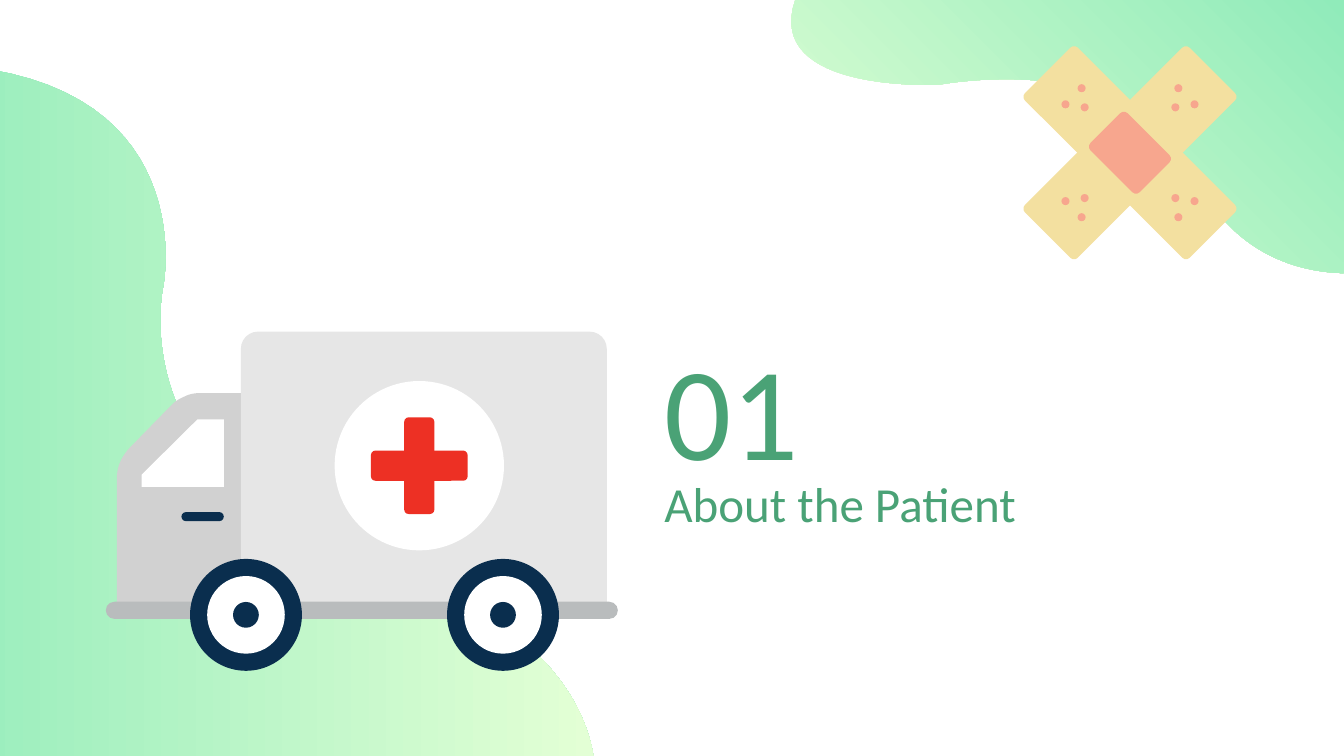
import itertools
import pptx
import pptx.dml.color
import pptx.enum.shapes
import pptx.enum.text
import pptx.util
from dataclasses import dataclass

KIND = pptx.enum.shapes.MSO_SHAPE
COLUMNS, ROWS = 133.33, 75
WIDTH, HEIGHT = pptx.util.Inches(13.33), pptx.util.Inches(7.5)


@dataclass(frozen=True)
class Theme:
    """Colours, font and type sizes of the slide."""
    font: str = "Calibri"
    number_size: float = 94.7
    title_size: float = 35
    text: str = "4AA276"
    mint: str = "90EBBA"
    pale: str = "E3FFD5"
    plaster: str = "F3E0A0"
    pad: str = "F7A68E"
    cab: str = "D1D1D1"
    body: str = "E6E6E6"
    bumper: str = "B9BCBD"
    navy: str = "0A2E4E"
    red: str = "ED3024"
    white: str = "FFFFFF"


def rgb(colour):
    """Turn a hex string into a colour."""
    return pptx.dml.color.RGBColor.from_string(colour)


def write(shape, text, *, font, size, colour):
    """Put one formatted line of text into a shape."""
    paragraph = shape.text_frame.paragraphs[0]
    run = paragraph.add_run()
    run.text = text
    run.font.name = font
    run.font.size = pptx.util.Pt(size)
    run.font.color.rgb = rgb(colour)


def trace(start, segments, steps=32):
    """Yield the points of lines (one point) and cubic curves (three points)."""
    for segment in segments:
        if len(segment) == 1:
            yield segment[0]
        else:
            for step in range(1, steps + 1):
                t = step / steps
                weights = (1 - t) ** 3, 3 * t * (1 - t) ** 2, 3 * t * t * (1 - t), t ** 3
                yield tuple(sum(weight * value for weight, value in zip(weights, axis))
                            for axis in zip(start, *segment))
        start = segment[-1]


class Painter:
    """Draws on one slide, with all lengths in grid columns and rows."""

    def __init__(self, slide, theme):
        """Keep the slide and the style."""
        self.slide = slide
        self.theme = theme
        self.shapes = slide.shapes

    def across(self, columns):
        """Convert columns to a length."""
        return round(columns * WIDTH / COLUMNS)

    def down(self, rows):
        """Convert rows to a length."""
        return round(rows * HEIGHT / ROWS)

    def group(self):
        """Collect the next shapes in a new group."""
        self.shapes = self.slide.shapes.add_group_shape().shapes

    def finish(self, shape, colour):
        """Give a shape a flat fill without line or shadow."""
        shape.shadow.inherit = False
        shape.line.fill.background()
        shape.fill.solid()
        shape.fill.fore_color.rgb = rgb(colour)
        return shape

    def preset(self, kind, left, top, width, height, colour):
        """Add a preset shape."""
        shape = self.shapes.add_shape(kind, self.across(left), self.down(top),
                                      self.across(width), self.down(height))
        return self.finish(shape, colour)

    def rounded(self, left, top, width, height, colour, radius,
                kind=KIND.ROUNDED_RECTANGLE, rotation=0):
        """Add a rectangle with rounded corners."""
        shape = self.preset(kind, left, top, width, height, colour)
        shape.adjustments[0] = radius / min(width, height)
        shape.rotation = rotation

    def tilted(self, centre, width, height, colour, rotation):
        """Add a rounded rectangle turned about its centre."""
        self.rounded(centre[0] - width / 2, centre[1] - height / 2,
                     width, height, colour, 0.5, rotation=rotation)

    def disc(self, x, y, radius, colour):
        """Add a circle about its centre."""
        self.preset(KIND.OVAL, x - radius, y - radius, 2 * radius, 2 * radius, colour)

    def outline(self, colour, start, *segments):
        """Add a closed outline of lines and curves."""
        builder = self.shapes.build_freeform(self.across(start[0]), self.down(start[1]))
        builder.add_line_segments([(self.across(x), self.down(y))
                                   for x, y in trace(start, segments)], close=True)
        return self.finish(builder.convert_to_shape(), colour)

    def blend(self, shape, colours, angle):
        """Fill a shape with a two-colour gradient."""
        shape.fill.gradient()
        shape.fill.gradient_angle = angle
        for stop, colour in zip(shape.fill.gradient_stops, colours):
            stop.color.rgb = rgb(colour)

    def heading(self, text, left, top, width, height, size):
        """Add a line of heading text."""
        box = self.slide.shapes.add_textbox(self.across(left), self.down(top),
                                            self.across(width), self.down(height))
        frame = box.text_frame
        frame.word_wrap = True
        frame.vertical_anchor = pptx.enum.text.MSO_ANCHOR.TOP
        frame.margin_left = frame.margin_right = self.across(1.3)
        frame.margin_top, frame.margin_bottom = self.down(1.8), self.down(1.3)
        write(box, text, font=self.theme.font, size=size, colour=self.theme.text)


def draw_background(painter):
    """Draw the two green blobs."""
    theme = painter.theme
    left_blob = painter.outline(
        theme.mint, (58.9, 75.2),
        ((58.2, 70.4), (54.4, 61.5), (36.8, 55.7)),
        ((11.8, 47.5), (16.2, 28.4), (16.2, 28.4)),
        ((16.2, 28.4), (20.8, 4.8), (-11.5, 6.4)),
        ((-11.5, 75.2),))
    painter.blend(left_blob, (theme.mint, theme.pale), 0)
    right_blob = painter.outline(
        theme.mint, (133.3, 27.1),
        ((129.2, 27), (122.2, 25.5), (118.4, 17.1)),
        ((112.8, 4.6), (93.2, 8.4), (93.2, 8.4)),
        ((93.2, 8.4), (75.7, 9.3), (78.9, 0)),
        ((133.3, 0),))
    painter.blend(right_blob, (theme.pale, theme.mint), 45)


def draw_plasters(painter):
    """Draw the crossed plasters with their pad and dots."""
    theme = painter.theme
    centre = 112.1, 15.15
    painter.group()
    for rotation in (-45, 45):
        painter.tilted(centre, 23.1, 7.4, theme.plaster, rotation)
    painter.tilted(centre, 6.9, 5.2, theme.pad, 45)
    dots = (4.8, 6.4), (6.4, 4.8), (4.5, 4.5)
    for side, level, (x, y) in itertools.product((-1, 1), (-1, 1), dots):
        painter.disc(centre[0] + side * x, centre[1] + level * y, 0.4, theme.pad)


def draw_ambulance(painter):
    """Draw the ambulance from cab to wheels."""
    theme = painter.theme
    painter.group()
    painter.outline(
        theme.cab, (19.9, 39),
        ((19.3, 39), (18.8, 39.1), (18.4, 39.3)),
        ((17.9, 39.5), (17.4, 39.8), (17.1, 40.1)),
        ((12.7, 44.6),),
        ((12.4, 45), (12.1, 45.4), (11.9, 45.9)),
        ((11.7, 46.4), (11.6, 46.9), (11.6, 47.4)),
        ((11.6, 61.4),), ((24, 61.4),), ((24, 39),))
    painter.outline(theme.white, (14.05, 48.3), ((22.2, 48.3),), ((22.2, 41.6),),
                    ((19.6, 41.6),), ((14.05, 47.1),))
    painter.rounded(18, 50.8, 4.2, 0.9, theme.navy, 0.45)
    painter.rounded(23.9, 32.9, 36.3, 28.5, theme.body, 1.7, KIND.ROUND_2_SAME_RECTANGLE)
    painter.disc(41.6, 46.2, 8.4, theme.white)
    painter.rounded(40.1, 41.4, 3, 9.6, theme.red, 0.45)
    painter.rounded(36.8, 44.7, 9.6, 3, theme.red, 0.45)
    painter.rounded(10.5, 59.7, 50.8, 1.7, theme.bumper, 0.85)
    rings = (5.55, theme.navy), (3.85, theme.white), (1.28, theme.navy)
    for x, (radius, colour) in itertools.product((24.4, 49.9), rings):
        painter.disc(x, 61, radius, colour)


def main():
    """Build the section slide and save it."""
    presentation = pptx.Presentation()
    presentation.slide_width, presentation.slide_height = WIDTH, HEIGHT
    theme = Theme()
    painter = Painter(presentation.slides.add_slide(presentation.slide_layouts[6]), theme)
    draw_background(painter)
    painter.heading("About the Patient", 64.6, 45.2, 58.2, 9, theme.title_size)
    painter.heading("01", 64.6, 30.7, 58.2, 14, theme.number_size)
    draw_plasters(painter)
    draw_ambulance(painter)
    presentation.save("out.pptx")


if __name__ == "__main__":
    main()
